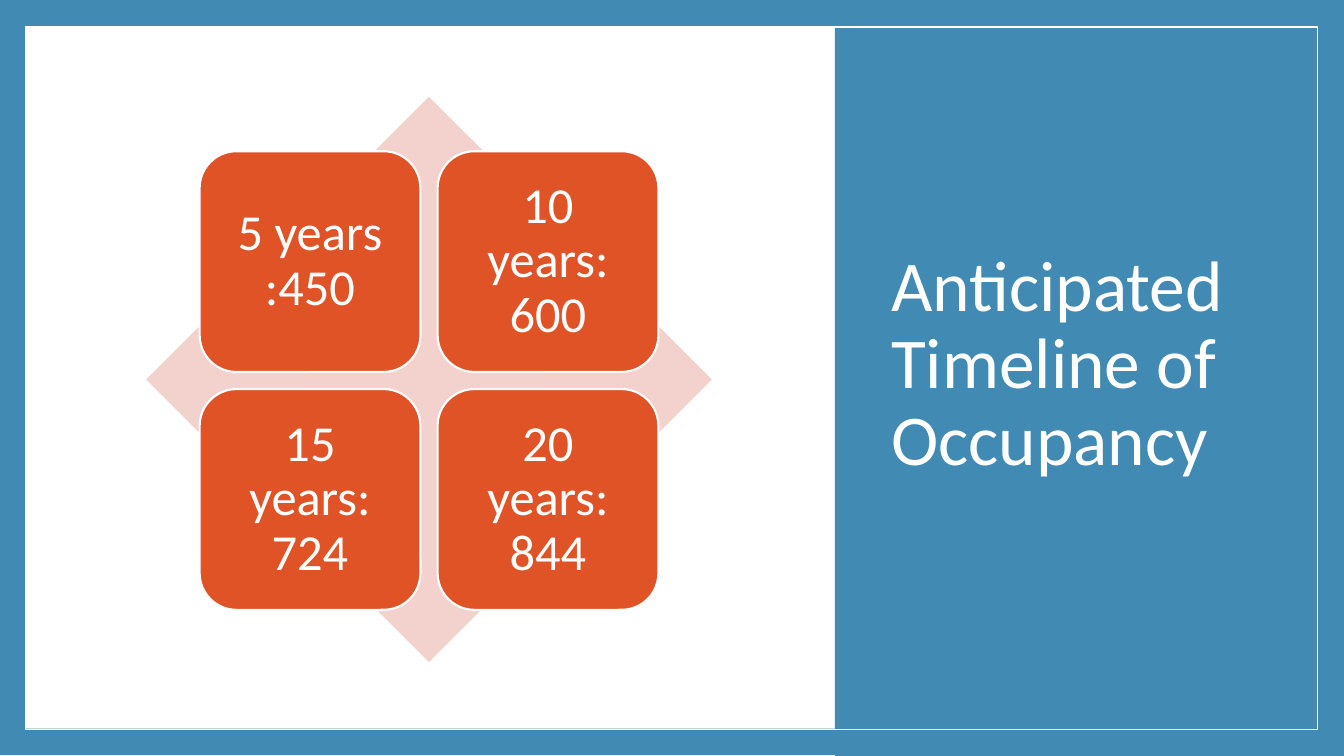
from dataclasses import dataclass

from pptx import Presentation
from pptx.dml.color import RGBColor
from pptx.enum import shapes, text
from pptx.util import Inches, Pt


@dataclass(frozen=True)
class Theme:
    blue: str = "418AB3"
    white: str = "FFFFFF"
    orange: str = "DF5327"
    pink: str = "F3D1CD"
    font: str = "Calibri"
    title_size: int = 51
    tile_size: int = 36


theme = Theme()


def add_panel(kind, left, top, width, height, fill=None, line_width=None):
    shape = slide.shapes.add_shape(
        kind, Inches(left), Inches(top), Inches(width), Inches(height)
    )
    shape.shadow.inherit = False
    if fill:
        shape.fill.solid()
        shape.fill.fore_color.rgb = RGBColor.from_string(fill)
    else:
        shape.fill.background()
    if line_width:
        shape.line.color.rgb = RGBColor.from_string(theme.white)
        shape.line.width = Pt(line_width)
    else:
        shape.line.fill.background()
    return shape


def write_text(shape, wording, size, alignment):
    frame = shape.text_frame
    frame.word_wrap = True
    frame.vertical_anchor = text.MSO_ANCHOR.MIDDLE
    paragraph = frame.paragraphs[0]
    paragraph.text = wording
    paragraph.alignment = alignment
    paragraph.line_spacing = 0.9
    paragraph.font.name = theme.font
    paragraph.font.size = Pt(size)
    paragraph.font.color.rgb = RGBColor.from_string(theme.white)
    return frame


presentation = Presentation()
presentation.slide_width = Inches(13.33)
presentation.slide_height = Inches(7.5)
slide = presentation.slides.add_slide(presentation.slide_layouts[6])

rectangle = shapes.MSO_SHAPE.RECTANGLE
add_panel(rectangle, 0, -0.01, 13.33, 7.5, theme.blue)
add_panel(rectangle, 0.25, 0.26, 12.82, 6.97, theme.white)
add_panel(rectangle, 8.28, 0, 5.05, 7.5, theme.blue)

title = slide.shapes.add_textbox(Inches(8.74), Inches(0.67), Inches(3.91), Inches(5.91))
write_text(
    title, "Anticipated Timeline of Occupancy", theme.title_size, text.PP_ALIGN.LEFT
)

add_panel(rectangle, 0.25, 0.27, 12.82, 6.97, line_width=1)
add_panel(shapes.MSO_SHAPE.DIAMOND, 1.45, 0.96, 5.61, 5.61, theme.pink)

occupancy = ["5 years :450", "10 years: 600", "15 years: 724", "20 years: 844"]
tile_side = 2.19
tile_pitch = 2.36
for index, wording in enumerate(occupancy):
    row, column = divmod(index, 2)
    tile = add_panel(
        shapes.MSO_SHAPE.ROUNDED_RECTANGLE,
        1.98 + column * tile_pitch,
        1.5 + row * tile_pitch,
        tile_side,
        tile_side,
        theme.orange,
        line_width=1.5,
    )
    frame = write_text(tile, wording, theme.tile_size, text.PP_ALIGN.CENTER)
    frame.margin_left = frame.margin_right = Inches(0.15)
    frame.margin_top = frame.margin_bottom = Inches(0.15)

presentation.save("out.pptx")
